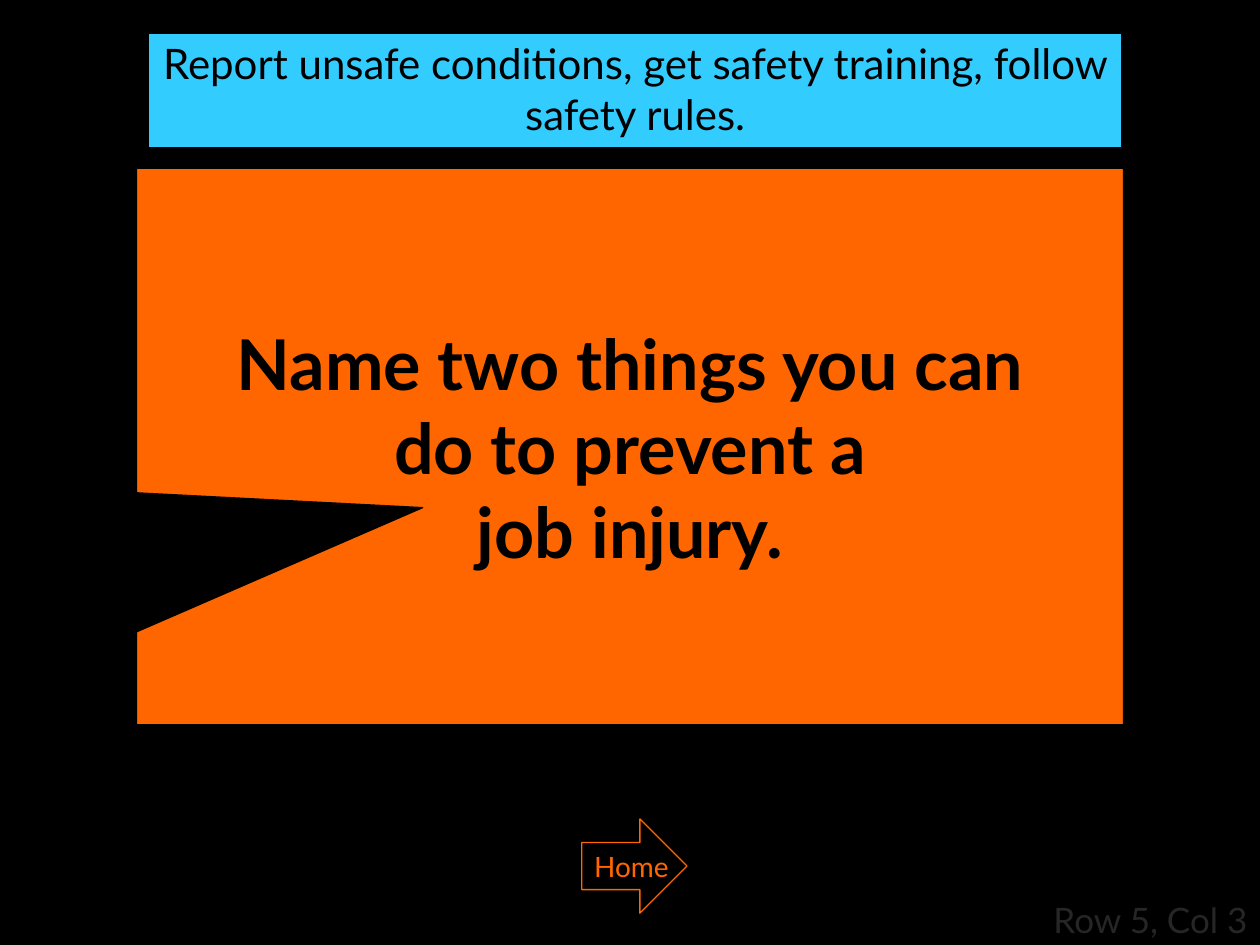
import pptx
import pptx.util
import pptx.dml.color
import pptx.enum.shapes
import pptx.enum.text

Cm = pptx.util.Cm
Pt = pptx.util.Pt
Kind = pptx.enum.shapes.MSO_SHAPE
Align = pptx.enum.text.PP_ALIGN
Anchor = pptx.enum.text.MSO_ANCHOR

COLORS = {"black": "000000", "orange": "FF6600", "sky": "33CCFF", "gray": "262626"}


def tint(name):
    return pptx.dml.color.RGBColor.from_string(COLORS[name])


class Board:
    font = "Lato"

    def __init__(self, deck):
        self.slide = deck.slides.add_slide(deck.slide_layouts[6])
        back = self.slide.background.fill
        back.solid()
        back.fore_color.rgb = tint("black")

    def letter(self, shape, lines, size, color, align, bold=False, wrap=True,
               anchor=Anchor.MIDDLE):
        """Fill a shape with styled text, one paragraph a line."""
        frame = shape.text_frame
        frame.word_wrap = wrap
        frame.vertical_anchor = anchor
        frame.text = "\n".join(lines)
        for para in frame.paragraphs:
            para.alignment = align
            font = para.font
            font.name, font.size, font.bold = self.font, Pt(size), bold
            font.color.rgb = tint(color)

    def shape(self, kind, box, fill, line, width=0.75, adjust=()):
        item = self.slide.shapes.add_shape(kind, *map(Cm, box))
        item.shadow.inherit = False
        item.fill.solid()
        item.fill.fore_color.rgb = tint(fill)
        item.line.color.rgb = tint(line)
        item.line.width = Pt(width)
        for index, value in enumerate(adjust):
            item.adjustments[index] = value
        return item

    def label(self, box, text, size, color, align):
        item = self.slide.shapes.add_textbox(*map(Cm, box))
        self.letter(item, [text], size, color, align, anchor=Anchor.TOP)


def main():
    deck = pptx.Presentation()
    deck.slide_width, deck.slide_height = Cm(25.4), Cm(19.05)
    board = Board(deck)

    home = board.shape(Kind.RIGHT_ARROW, (11.73, 16.51, 2.12, 1.9), "black", "orange")
    board.letter(home, ["Home"], 16, "orange", Align.LEFT, wrap=False)

    quiz = board.shape(Kind.RECTANGULAR_CALLOUT, (2.75, 3.39, 19.9, 11.22),
                       "orange", "black", adjust=(-0.21, 0.11))
    lines = ["Name two things you can", "do to prevent a", "job injury."]
    board.letter(quiz, lines, 40, "black", Align.CENTER, bold=True, wrap=False)

    answer = board.shape(Kind.RECTANGLE, (2.96, 0.64, 19.69, 2.38), "sky", "black", 3)
    board.letter(answer,
                 ["Report unsafe conditions, get safety training, follow safety rules."],
                 24, "black", Align.CENTER, anchor=Anchor.TOP)

    board.label((20.11, 17.99, 5.29, 1.06), "Row 5, Col 3", 20, "gray", Align.RIGHT)
    deck.save("out.pptx")


if __name__ == "__main__":
    main()
